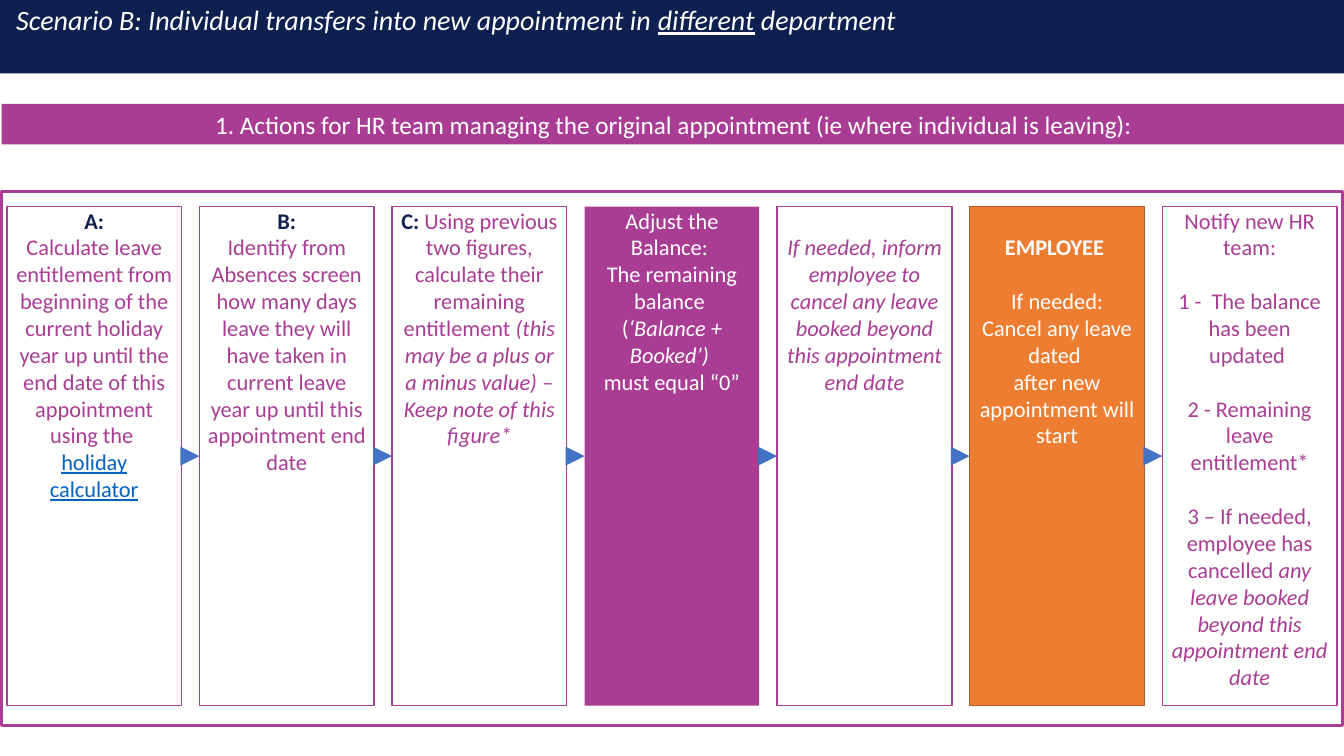
from dataclasses import dataclass

from lxml import etree
from pptx import Presentation
from pptx import util as u
from pptx.dml.color import RGBColor
from pptx.enum import shapes, text
from pptx.oxml import ns


@dataclass(frozen=True)
class Theme:
    navy: str = "0E2050"
    purple: str = "A93D94"
    orange: str = "ED7D31"
    brown: str = "AF5C24"
    blue: str = "4472C4"
    link: str = "0563C1"
    white: str = "FFFFFF"
    font: str = "Calibri"
    title_size: float = 20
    banner_size: float = 18
    body_size: float = 16
    body_line: float = 19.2


class SlideBuilder:
    """Holds the theme and the current slide."""

    def __init__(self, slide, theme):
        self.slide = slide
        self.theme = theme

    def rectangle(self, left, top, width, height, fill=None, line=None, weight=1):
        shape = self.slide.shapes.add_shape(
            shapes.MSO_SHAPE.RECTANGLE,
            u.Pt(left), u.Pt(top), u.Pt(width), u.Pt(height))
        shape.shadow.inherit = False
        if fill:
            shape.fill.solid()
            shape.fill.fore_color.rgb = RGBColor.from_string(fill)
        else:
            shape.fill.background()
        if line:
            shape.line.color.rgb = RGBColor.from_string(line)
            shape.line.width = u.Pt(weight)
        else:
            shape.line.fill.background()
        return shape

    def add_text(self, shape, paragraphs, size, color, insets=(6, 0, 6, 0),
                 align=text.PP_ALIGN.CENTER, anchor=text.MSO_ANCHOR.TOP):
        """Each paragraph is (space before, runs); a run is (words, styles, colour)."""
        frame = shape.text_frame
        frame.word_wrap = True
        frame.vertical_anchor = anchor
        (frame.margin_left, frame.margin_top,
         frame.margin_right, frame.margin_bottom) = map(u.Pt, insets)
        for index, (space, runs) in enumerate(paragraphs):
            paragraph = frame.add_paragraph() if index else frame.paragraphs[0]
            paragraph.alignment = align
            paragraph.space_before = u.Pt(space)
            for words, styles, run_color in runs:
                run = paragraph.add_run()
                run.text = words
                font = run.font
                font.name = self.theme.font
                font.size = u.Pt(size)
                font.bold = "b" in styles
                font.italic = "i" in styles
                font.underline = "u" in styles
                font.color.rgb = RGBColor.from_string(run_color or color)

    def arrow(self, start, end):
        """Join the right side of one box to the left side of the next."""
        connector = self.slide.shapes.add_connector(
            shapes.MSO_CONNECTOR.STRAIGHT, 0, 0, 0, 0)
        connector.begin_connect(start, 3)
        connector.end_connect(end, 1)
        connector.line.color.rgb = RGBColor.from_string(self.theme.blue)
        connector.line.width = u.Pt(4.5)
        properties = connector._element.spPr
        etree.SubElement(properties.get_or_add_ln(), ns.qn("a:tailEnd"), type="triangle")
        etree.SubElement(properties, ns.qn("a:effectLst"))


def styled(words, styles="", color=None):
    return (words, styles, color)


def main():
    theme = Theme()
    presentation = Presentation()
    presentation.slide_width, presentation.slide_height = u.Pt(960), u.Pt(540)
    slide = presentation.slides.add_slide(presentation.slide_layouts[6])
    builder = SlideBuilder(slide, theme)
    gap = theme.body_line

    # Title bar
    title = builder.rectangle(0, 0, 960, 52.4, fill=theme.navy)
    builder.add_text(title, [(0, [
        styled("Scenario B: Individual transfers into new appointment in ", "i"),
        styled("different", "iu"),
        styled(" department", "i")])],
        theme.title_size, theme.white, (11.5, 2, 0, 0), text.PP_ALIGN.LEFT)

    # Section banner
    banner = builder.rectangle(1.2, 74.2, 960, 29, fill=theme.purple)
    builder.add_text(banner, [(0, [styled(
        "1. Actions for HR team managing the original appointment "
        "(ie where individual is leaving):")])],
        theme.banner_size, theme.white, (7.2, 3.6, 7.2, 3.6),
        anchor=text.MSO_ANCHOR.MIDDLE)

    # Frame around the steps
    builder.rectangle(1.2, 136.7, 957.6, 381.6, line=theme.purple, weight=2.25)

    # Steps: fill, line, text colour, top inset, paragraphs
    outlined = (None, theme.purple, theme.purple)
    steps = [
        (*outlined, 0, [
            (0, [styled("A:", "b", theme.navy)]),
            (0, [styled("Calculate leave entitlement from beginning of the current "
                        "holiday year up until the end date of this appointment "
                        "using the ")]),
            (0, [styled("holiday calculator", "u", theme.link)])]),
        (*outlined, 0, [
            (0, [styled("B:", "b", theme.navy)]),
            (0, [styled("Identify from Absences screen how many days leave they will "
                        "have taken in current leave year up until this appointment "
                        "end date")])]),
        (*outlined, 0, [
            (0, [styled("C:", "b", theme.navy),
                 styled(" Using previous two figures, calculate their remaining "
                        "entitlement "),
                 styled("(this may be a plus or a minus value) – Keep note of this "
                        "figure*", "i")])]),
        (theme.purple, None, theme.white, 0, [
            (0, [styled("Adjust the Balance: ")]),
            (0, [styled("The remaining balance ")]),
            (0, [styled("("), styled("‘Balance + Booked’) ", "i")]),
            (0, [styled("must equal “0”")])]),
        (*outlined, gap, [
            (0, [styled("If needed, inform employee to cancel any leave booked "
                        "beyond this appointment end date", "i")])]),
        (theme.orange, theme.brown, theme.white, gap, [
            (0, [styled("EMPLOYEE ", "b")]),
            (gap, [styled("If needed:")]),
            (0, [styled("Cancel any leave dated ")]),
            (0, [styled("after new appointment will start")])]),
        (*outlined, 0, [
            (0, [styled("Notify new HR team:")]),
            (gap, [styled("1 -  The balance has been updated ")]),
            (gap, [styled("2 - Remaining leave entitlement*")]),
            (gap, [styled("3 – If needed, employee has cancelled "),
                   styled("any leave booked beyond this appointment end date", "i")])]),
    ]
    boxes = []
    for index, (fill, line, color, inset, paragraphs) in enumerate(steps):
        box = builder.rectangle(4.9 + 137.55 * index, 147.6, 124.8, 356.4, fill, line)
        builder.add_text(box, paragraphs, theme.body_size, color, (6, inset, 6, 0))
        boxes.append(box)

    # Arrows between neighbouring steps
    for start, end in zip(boxes, boxes[1:]):
        builder.arrow(start, end)

    presentation.save("out.pptx")


if __name__ == "__main__":
    main()
